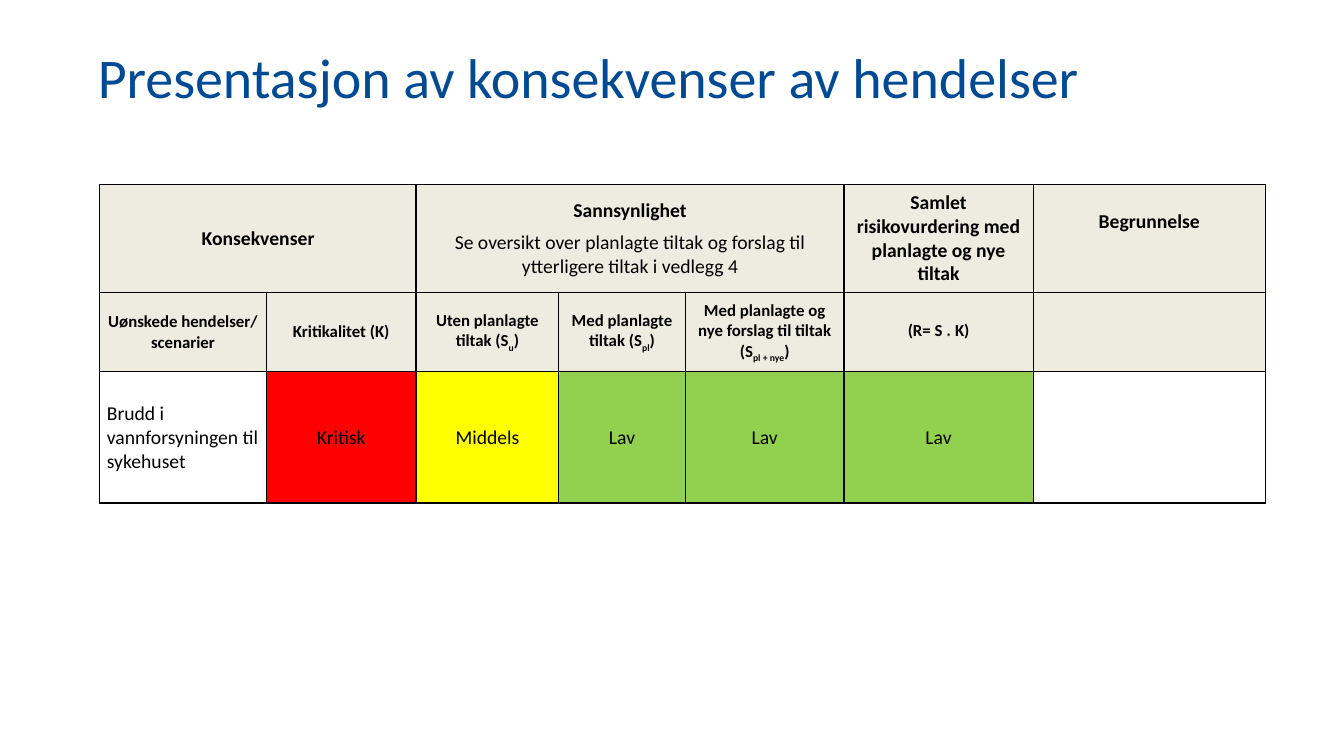
from lxml import etree
from pptx import Presentation, util as u
from pptx.dml.color import RGBColor
from pptx.enum import text
from pptx.oxml.ns import qn

COLORS = {"title": "004A93", "ink": "000000", "header": "EEECE1",
          "critical": "FF0000", "medium": "FFFF00", "low": "92D050"}
COLUMNS = [1.65, 1.49, 1.41, 1.26, 1.57, 1.88, 2.3]
ROWS = [1.07, 0.79, 1.3]
SIZES = [14, 12, 14]
CONTENT = [
    ["Konsekvenser", "",
     "Sannsynlighet\nSe oversikt over planlagte tiltak og forslag til ytterligere tiltak i vedlegg 4",
     "", "", "Samlet risikovurdering med planlagte og nye tiltak", "Begrunnelse"],
    ["Uønskede hendelser/ scenarier", "Kritikalitet (K)", "Uten planlagte tiltak (S_u_)",
     "Med planlagte tiltak (S_pl_)", "Med planlagte og nye forslag til tiltak (S_pl + nye_)",
     "(R= S _*_ K)", ""],
    ["Brudd i vannforsyningen til sykehuset", "Kritisk", "Middels", "Lav", "Lav", "Lav", ""],
]
FILLS = [["header"] * 7, ["header"] * 7,
         [None, "critical", "medium", "low", "low", "low", None]]
PROBABILITY = range(2, 5)


def style(font, size, color, bold=False):
    formats = {"name": "Calibri", "size": u.Pt(size), "bold": bold}
    for name, value in formats.items():
        setattr(font, name, value)
    font.color.rgb = RGBColor.from_string(COLORS[color])


def add_border(cell, side, points):
    line = etree.SubElement(cell._tc.get_or_add_tcPr(), qn(f"a:ln{side}"), w=str(u.Pt(points)))
    fill = etree.SubElement(line, qn("a:solidFill"))
    etree.SubElement(fill, qn("a:srgbClr"), val=COLORS["ink"])


deck = Presentation()
deck.slide_width, deck.slide_height = u.Inches(13.33), u.Inches(7.5)
page = deck.slides.add_slide(deck.slide_layouts[5])

title = page.shapes.title
place = {"left": 0.87, "top": 0.4, "width": 10.63, "height": 0.79}
for name, value in place.items():
    setattr(title, name, u.Inches(value))
title.text_frame.text = "Presentasjon av konsekvenser av hendelser"
title.text_frame.auto_size = text.MSO_AUTO_SIZE.NONE
title.text_frame.vertical_anchor = text.MSO_ANCHOR.MIDDLE
heading = title.text_frame.paragraphs[0]
heading.alignment = text.PP_ALIGN.LEFT
heading.line_spacing = 0.9
style(heading.runs[0].font, 40, "title")

frame = page.shapes.add_table(len(ROWS), len(COLUMNS), u.Inches(0.99), u.Inches(1.83),
                              u.Inches(sum(COLUMNS)), u.Inches(sum(ROWS)))
table = frame.table
table.first_row = table.horz_banding = False
for column, width in zip(table.columns, COLUMNS):
    column.width = u.Inches(width)
for row, height in zip(table.rows, ROWS):
    row.height = u.Inches(height)
table.cell(0, 0).merge(table.cell(0, 1))
table.cell(0, 2).merge(table.cell(0, 4))

for r, labels in enumerate(CONTENT):
    for c, label in enumerate(labels):
        cell = table.cell(r, c)
        end = c + (cell.span_width if cell.is_merge_origin else 1)
        edges = (PROBABILITY.start, PROBABILITY.stop)
        heavy = {"L": c in edges, "R": end in edges,
                 "T": r == 0 and c in PROBABILITY,
                 "B": r == len(ROWS) - 1 and c in PROBABILITY}
        for side, is_heavy in heavy.items():
            add_border(cell, side, 1.5 if is_heavy else 1)
        if FILLS[r][c]:
            cell.fill.solid()
            cell.fill.fore_color.rgb = RGBColor.from_string(COLORS[FILLS[r][c]])
        else:
            cell.fill.background()
        formats = {"margin_left": u.Inches(0.07), "margin_right": u.Inches(0.07),
                   "margin_top": 0, "margin_bottom": 0,
                   "vertical_anchor": text.MSO_ANCHOR.MIDDLE}
        for name, value in formats.items():
            setattr(cell, name, value)
        if not label:
            continue
        for p, wording in enumerate(label.split("\n")):
            para = cell.text_frame.add_paragraph() if p else cell.text_frame.paragraphs[0]
            para.alignment = text.PP_ALIGN.LEFT if (r, c) == (2, 0) else text.PP_ALIGN.CENTER
            para.space_after = u.Pt(6)
            for s, part in enumerate(wording.split("_")):
                span = para.add_run()
                span.text = part
                style(span.font, SIZES[r], "ink", r < 2 and p == 0)
                if s % 2:
                    span.font._element.set("baseline", "-25000")

table.cell(0, 6).margin_bottom = u.Inches(0.32)

deck.save("out.pptx")
